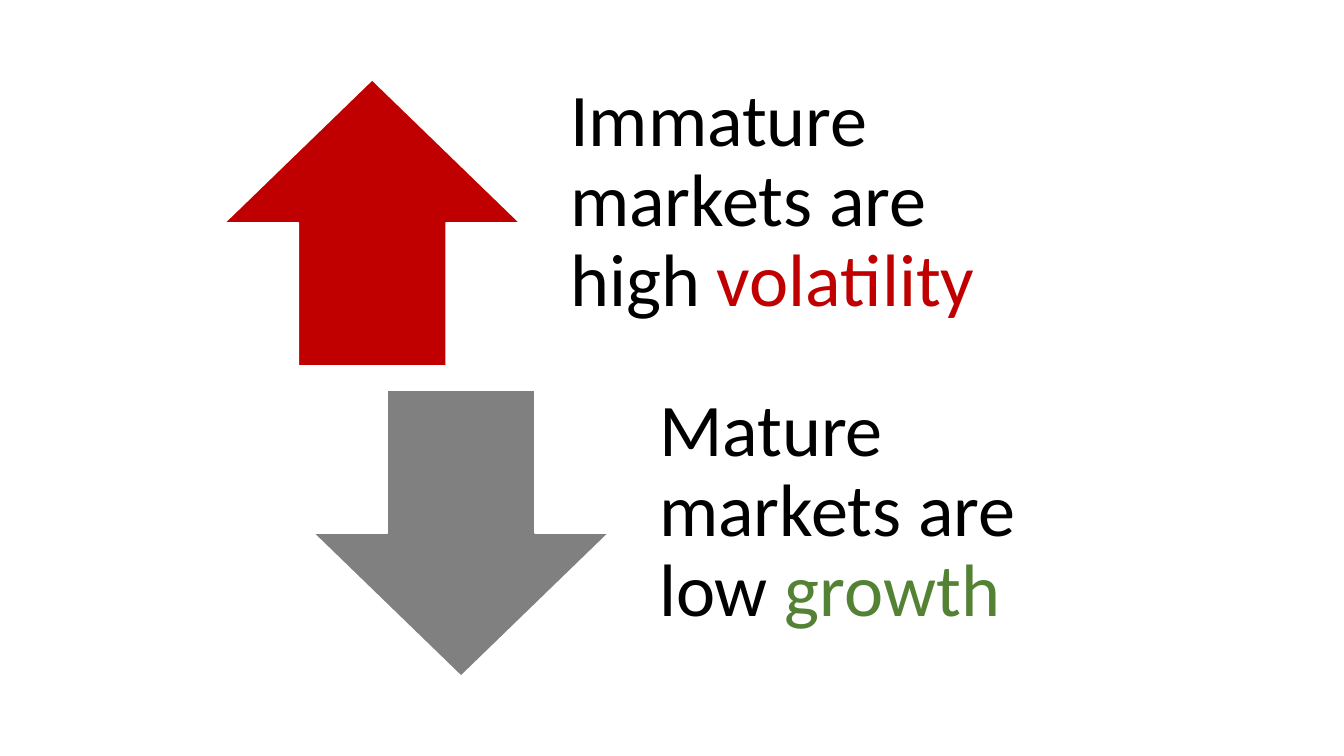
from pptx import Presentation
from pptx.dml.color import RGBColor
from pptx.enum.shapes import MSO_SHAPE
from pptx.enum.text import MSO_ANCHOR
from pptx.util import Cm, Pt

HEIGHT = 7.21
MARKETS = [
    (MSO_SHAPE.UP_ARROW, "C00000", "Immature markets are high ", "volatility", "C00000"),
    (MSO_SHAPE.DOWN_ARROW, "808080", "Mature markets are low ", "growth", "548235"),
]


def paint(color, value):
    """Set a fill, line or font colour format from a hex string."""
    color.rgb = RGBColor.from_string(value)


def add_arrow(slide, kind, left, top, color):
    arrow = slide.shapes.add_shape(kind, Cm(left), Cm(top), Cm(7.44), Cm(HEIGHT))
    arrow.shadow.inherit = False
    arrow.fill.solid()
    paint(arrow.fill.fore_color, color)
    paint(arrow.line.color, "FFFFFF")
    arrow.line.width = Pt(1)


def add_claim(slide, left, top, text, key, color):
    """Add a statement whose last word, key, is coloured."""
    box = slide.shapes.add_textbox(Cm(left), Cm(top), Cm(12.65), Cm(HEIGHT))
    frame = box.text_frame
    frame.word_wrap = True
    frame.vertical_anchor = MSO_ANCHOR.MIDDLE
    frame.margin_left = frame.margin_right = frame.margin_bottom = Cm(1.04)
    frame.margin_top = 0
    para = frame.paragraphs[0]
    para.line_spacing = 0.9
    para.font.name = "Calibri"
    para.font.size = Pt(53)
    for words, tint in ((text, "000000"), (key, color)):
        run = para.add_run()
        run.text = words
        paint(run.font.color, tint)


def main():
    deck = Presentation()
    deck.slide_width, deck.slide_height = Cm(33.87), Cm(19.05)
    slide = deck.slides.add_slide(deck.slide_layouts[6])
    for row, (kind, fill, text, key, color) in enumerate(MARKETS):
        left, top = 5.66 + 2.24 * row, 2.01 + 7.82 * row
        add_arrow(slide, kind, left, top, fill)
        add_claim(slide, left + 7.67, top, text, key, color)
    deck.save("out.pptx")


if __name__ == "__main__":
    main()
